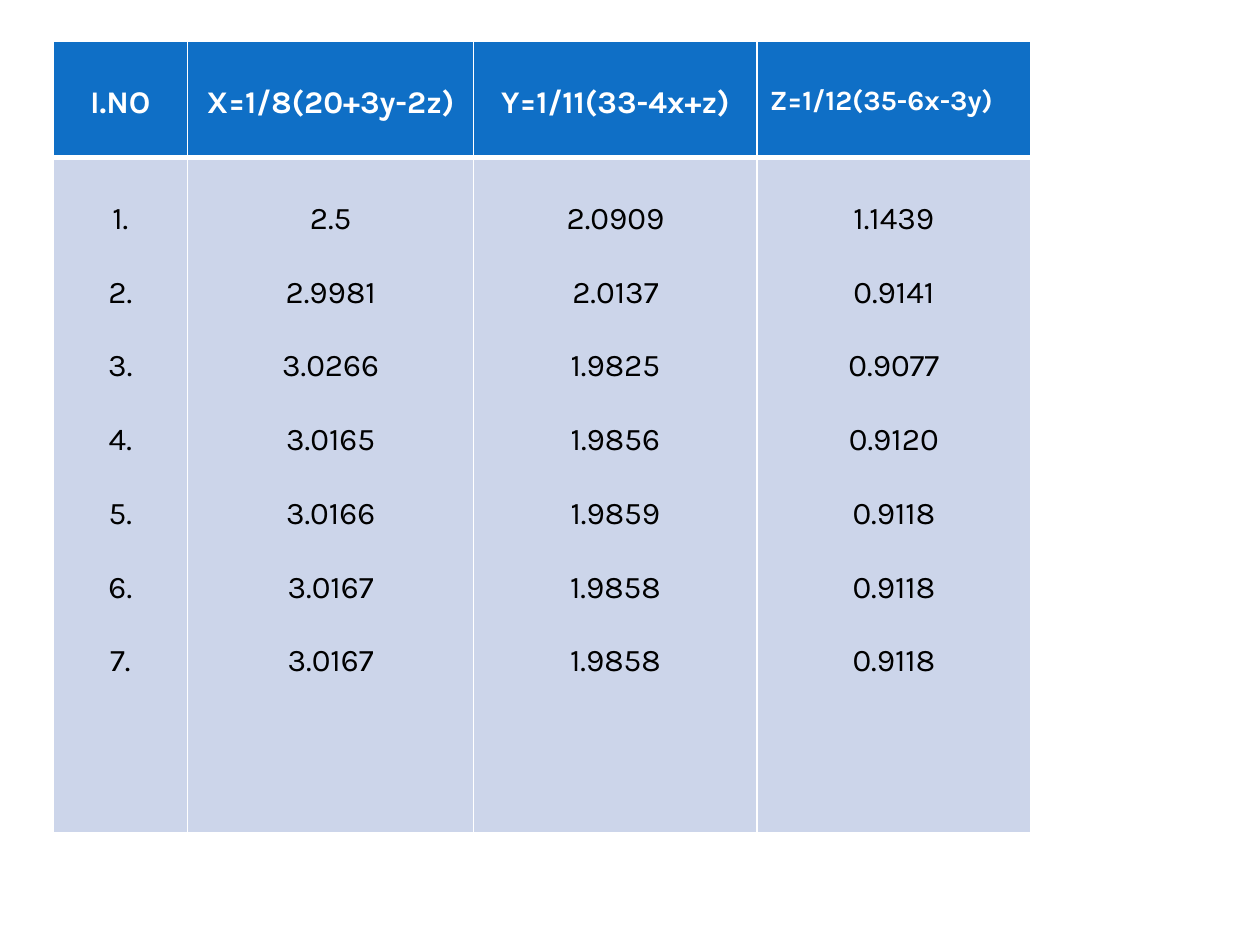
from lxml import etree
from pptx import Presentation
from pptx.dml.color import RGBColor
from pptx.enum import text
from pptx.oxml import ns
from pptx.util import Inches, Pt

HEADERS = ["I.NO", "X=1/8(20+3y-2z)", "Y=1/11(33-4x+z)", "Z=1/12(35-6x-3y)"]
COLUMNS = [
    ["1.", "2.", "3.", "4.", "5.", "6.", "7."],
    ["2.5", "2.9981", "3.0266", "3.0165", "3.0166", "3.0167", "3.0167"],
    ["2.0909", "2.0137", "1.9825", "1.9856", "1.9859", "1.9858", "1.9858"],
    ["1.1439", "0.9141", "0.9077", "0.9120", "0.9118", "0.9118", "0.9118"],
]
COL_WIDTHS = [1.07, 2.27, 2.25, 2.17]
ROW_HEIGHTS = [0.92, 5.36]
LEFT, TOP = 0.42, 0.33

THEME = {
    "font": "Karla", "size": 18, "small": 16,
    "header_fill": "0F6FC6", "body_fill": "CCD5EA",
    "header_text": "FFFFFF", "body_text": "000000", "border": "FFFFFF",
    "line": 21,          # height of one text line, points
    "thin": 1, "thick": 3,
}
CENTER, START = text.PP_ALIGN.CENTER, text.PP_ALIGN.LEFT


def set_borders(cell, widths):
    """Draw the cell's edges; widths maps L, R, T, B to points."""
    tc_pr = cell._tc.get_or_add_tcPr()
    for side, width in widths.items():
        ln = etree.SubElement(tc_pr, ns.qn(f"a:ln{side}"), w=str(Pt(width)))
        fill = etree.SubElement(ln, ns.qn("a:solidFill"))
        etree.SubElement(fill, ns.qn("a:srgbClr"), val=THEME["border"])


def fill_cell(cell, lines, kind, size, align):
    """Write one paragraph per line, starting one line below the cell's top."""
    header = kind == "header"
    thin, thick = THEME["thin"], THEME["thick"]
    set_borders(cell, {"L": thin, "R": thin,
                       "T": thin if header else thick,
                       "B": thick if header else thin})
    cell.fill.solid()
    cell.fill.fore_color.rgb = RGBColor.from_string(THEME[f"{kind}_fill"])
    cell.margin_top = Inches(0.05) + Pt(THEME["line"])
    cell.vertical_anchor = text.MSO_ANCHOR.TOP
    tf = cell.text_frame
    for i, line in enumerate(lines):
        p = tf.add_paragraph() if i else tf.paragraphs[0]
        p.alignment = align
        if i:
            p.space_before = Pt(THEME["line"])
        r = p.add_run()
        r.text = line
        r.font.name = THEME["font"]
        r.font.size = Pt(size)
        r.font.bold = header
        r.font.color.rgb = RGBColor.from_string(THEME[f"{kind}_text"])


def main():
    prs = Presentation()
    prs.slide_width, prs.slide_height = Inches(10), Inches(7.5)
    s = prs.slides.add_slide(prs.slide_layouts[6])
    table = s.shapes.add_table(
        len(ROW_HEIGHTS), len(COL_WIDTHS), Inches(LEFT), Inches(TOP),
        Inches(sum(COL_WIDTHS)), Inches(sum(ROW_HEIGHTS))).table
    for row, height in zip(table.rows, ROW_HEIGHTS):
        row.height = Inches(height)
    for c, (header, values) in enumerate(zip(HEADERS, COLUMNS)):
        table.columns[c].width = Inches(COL_WIDTHS[c])
        last = c == len(HEADERS) - 1
        fill_cell(table.cell(0, c), [header], "header",
                  THEME["small"] if last else THEME["size"],
                  START if last else CENTER)
        fill_cell(table.cell(1, c), values, "body", THEME["size"], CENTER)
    prs.save("out.pptx")


if __name__ == "__main__":
    main()
